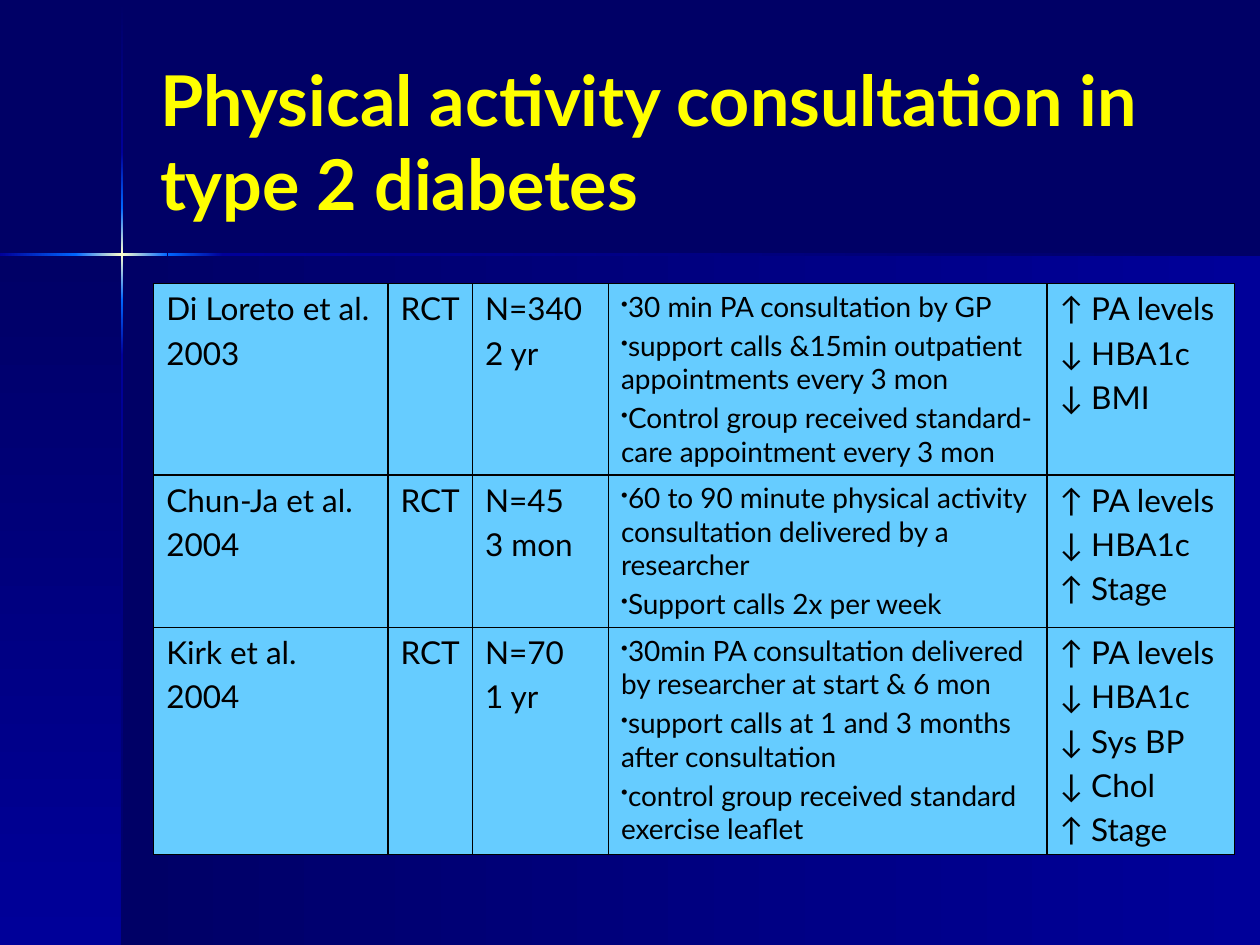
import pptx
import pptx.dml.color
import pptx.enum.shapes
import pptx.enum.text
import pptx.oxml.ns
import pptx.util
from lxml import etree

Inches = pptx.util.Inches
Pt = pptx.util.Pt
RGBColor = pptx.dml.color.RGBColor
qn = pptx.oxml.ns.qn

NAVY = RGBColor(0x00, 0x00, 0x66)
ROYAL = RGBColor(0x00, 0x00, 0x99)
BRIGHT = RGBColor(0x00, 0x66, 0xFF)
CREAM = RGBColor(0xFF, 0xFF, 0xCC)
YELLOW = RGBColor(0xFF, 0xFF, 0x00)
SKY = RGBColor(0x66, 0xCC, 0xFF)
BLACK = RGBColor(0x00, 0x00, 0x00)

TITLE = "Physical activity consultation in type 2 diabetes"
COLUMN_WIDTHS = [1.86, 0.67, 1.08, 3.48, 1.49]
ROW_HEIGHTS = [1.52, 1.21, 1.79]
BULLET_COLUMN = 3
STUDIES = [
    [["Di Loreto et al.", "2003"], ["RCT"], ["N=340", "2 yr"],
     ["30 min PA consultation by GP",
      "support calls &15min outpatient appointments every 3 mon",
      "Control group received standard-care appointment every 3 mon"],
     ["↑ PA levels", "↓ HBA1c", "↓ BMI"]],
    [["Chun-Ja et al.", "2004"], ["RCT"], ["N=45", "3 mon"],
     ["60 to 90 minute physical activity consultation delivered by a researcher",
      "Support calls 2x per week"],
     ["↑ PA levels", "↓ HBA1c", "↑ Stage"]],
    [["Kirk et al.", "2004"], ["RCT"], ["N=70", "1 yr"],
     ["30min PA consultation delivered by researcher at start & 6 mon",
      "support calls at 1 and 3 months after consultation",
      "control group received standard exercise leaflet"],
     ["↑ PA levels", "↓ HBA1c", "↓ Sys BP", "↓ Chol", "↑ Stage"]],
]


def add_element(parent, tag, **attributes):
    return etree.SubElement(parent, qn(tag), attributes)


class SlideBuilder:
    font = "Lato"
    title_size = 40
    text_size = 18
    bullet_size = 16

    def __init__(self, slide):
        self.slide = slide

    def background(self, color):
        fill = self.slide.background.fill
        fill.solid()
        fill.fore_color.rgb = color

    def gradient_box(self, left, top, width, height, colors, vertical):
        shape = self.slide.shapes.add_shape(
            pptx.enum.shapes.MSO_SHAPE.RECTANGLE,
            Inches(left), Inches(top), Inches(width), Inches(height))
        shape.shadow.inherit = False
        shape.line.fill.background()
        shape.fill.gradient()
        shape.fill.gradient_angle = 270 if vertical else 0
        stops = shape._element.spPr.find(".//" + qn("a:gsLst"))
        for stop in list(stops):
            stops.remove(stop)
        for index, color in enumerate(colors):
            position = 100000 * index // (len(colors) - 1)
            stop = add_element(stops, "a:gs", pos=str(position))
            add_element(stop, "a:srgbClr", val=str(color))

    def run(self, paragraph, text, size, color, bold=False):
        run = paragraph.add_run()
        run.text = text
        run.font.name = self.font
        run.font.size = Pt(size)
        run.font.bold = bold
        run.font.color.rgb = color

    def title(self, text, left, top, width, height):
        title = self.slide.shapes.title
        title.left, title.top = Inches(left), Inches(top)
        title.width, title.height = Inches(width), Inches(height)
        frame = title.text_frame
        frame.word_wrap = True
        frame.auto_size = pptx.enum.text.MSO_AUTO_SIZE.NONE
        frame.vertical_anchor = pptx.enum.text.MSO_ANCHOR.MIDDLE
        paragraph = frame.paragraphs[0]
        paragraph.alignment = pptx.enum.text.PP_ALIGN.LEFT
        self.run(paragraph, text, self.title_size, YELLOW, bold=True)
        # Bring the title in front of the backdrop
        self.slide.shapes._spTree.append(title._element)

    def bullet(self, paragraph):
        properties = paragraph._p.get_or_add_pPr()
        properties.set("marL", "0")
        properties.set("indent", "0")
        color = add_element(properties, "a:buClr")
        add_element(color, "a:srgbClr", val=str(BLACK))
        add_element(properties, "a:buSzPct", val="70000")
        add_element(properties, "a:buChar", char="•")

    def cell(self, cell, lines, bulleted):
        properties = cell._tc.get_or_add_tcPr()
        for side in ("a:lnL", "a:lnR", "a:lnT", "a:lnB"):
            border = add_element(properties, side, w=str(Pt(1)))
            fill = add_element(border, "a:solidFill")
            add_element(fill, "a:srgbClr", val=str(BLACK))
        cell.fill.solid()
        cell.fill.fore_color.rgb = SKY
        size = self.bullet_size if bulleted else self.text_size
        frame = cell.text_frame
        for index, line in enumerate(lines):
            paragraph = frame.add_paragraph() if index else frame.paragraphs[0]
            paragraph.space_before = Pt(size * 0.2)
            if bulleted:
                self.bullet(paragraph)
            self.run(paragraph, line, size, BLACK)

    def table(self, left, top, rows):
        table = self.slide.shapes.add_table(
            len(rows), len(COLUMN_WIDTHS), Inches(left), Inches(top),
            Inches(sum(COLUMN_WIDTHS)), Inches(sum(ROW_HEIGHTS))).table
        table.first_row = False
        table.horz_banding = False
        for column, width in zip(table.columns, COLUMN_WIDTHS):
            column.width = Inches(width)
        for row, height in zip(table.rows, ROW_HEIGHTS):
            row.height = Inches(height)
        for row_index, row in enumerate(rows):
            for column_index, lines in enumerate(row):
                self.cell(table.cell(row_index, column_index), lines,
                          column_index == BULLET_COLUMN)


def main():
    presentation = pptx.Presentation()
    presentation.slide_width = Inches(10)
    presentation.slide_height = Inches(7.5)
    slide = presentation.slides.add_slide(presentation.slide_layouts[5])
    builder = SlideBuilder(slide)

    # Backdrop panels
    builder.background(NAVY)
    builder.gradient_box(0.97, 2.02, 9.03, 5.48, [NAVY, ROYAL], False)
    builder.gradient_box(0, 2.02, 0.97, 5.48, [NAVY, ROYAL], True)

    # Glowing cross: start, end and colours of each beam segment
    vertical_beam = [
        (0.01, 1.21, [NAVY, ROYAL]),
        (2.82, 7.5, [ROYAL, NAVY]),
        (2.38, 2.82, [BRIGHT, ROYAL]),
        (1.21, 1.65, [ROYAL, BRIGHT]),
        (1.65, 2.38, [BRIGHT, CREAM, BRIGHT]),
    ]
    horizontal_beam = [
        (1.77, 10, [ROYAL, NAVY]),
        (0, 0.61, [ROYAL, BRIGHT]),
        (1.33, 1.77, [BRIGHT, ROYAL]),
        (0.6, 1.33, [BRIGHT, CREAM, BRIGHT]),
    ]
    for start, end, colors in vertical_beam:
        builder.gradient_box(0.96, start, 0.02, end - start, colors, True)
    for start, end, colors in horizontal_beam:
        builder.gradient_box(start, 2.01, end - start, 0.02, colors, False)

    # Title and study table
    builder.title(TITLE, 1.17, 0.33, 8.56, 1.57)
    builder.table(1.22, 2.25, STUDIES)

    presentation.save("out.pptx")


if __name__ == "__main__":
    main()
